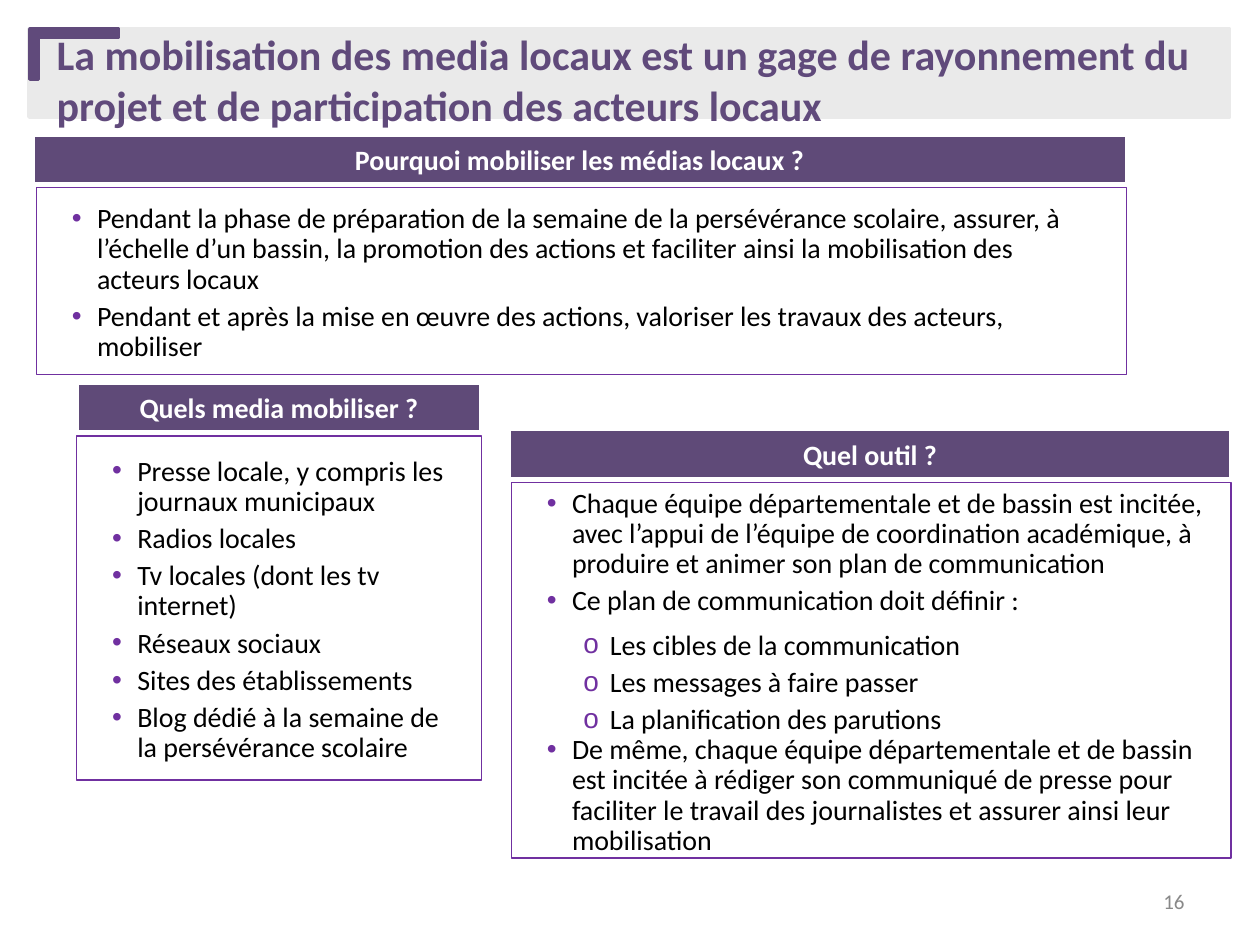
from pptx import Presentation, util as u
from pptx.dml.color import RGBColor
from pptx.enum import shapes, text
from pptx.oxml.ns import qn
from lxml import etree

PLUM = RGBColor(0x60, 0x4A, 0x7B)
HEAD = RGBColor(0x5F, 0x4A, 0x78)
EDGE = RGBColor(0x70, 0x30, 0xA0)
BAND = RGBColor(0xEA, 0xEA, 0xEA)
GREY = RGBColor(0x89, 0x89, 0x89)
WHITE = RGBColor(0xFF, 0xFF, 0xFF)
BLACK = RGBColor(0, 0, 0)
FONT = "Calibri"
LEFT, MID, RIGHT, JUST = (text.PP_ALIGN.LEFT, text.PP_ALIGN.CENTER,
                          text.PP_ALIGN.RIGHT, text.PP_ALIGN.JUSTIFY)

TITLE = ("La mobilisation des media locaux est un gage de rayonnement "
         "du projet et de participation des acteurs locaux")

# heading, heading box, list box, items (a tuple holds sub-items)
PANELS = [
    ("Pourquoi mobiliser les médias locaux ?",
     (0.26, 1.07, 8.68, 0.39), (0.29, 1.49, 8.65, 1.48),
     ["Pendant la phase de préparation de la semaine de la persévérance "
      "scolaire, assurer, à l’échelle d’un bassin, la promotion des actions "
      "et faciliter ainsi la mobilisation des acteurs locaux",
      "Pendant et après la mise en œuvre des actions, valoriser les travaux "
      "des acteurs, mobiliser"]),
    ("Quels media mobiliser ?",
     (0.61, 3.04, 3.21, 0.39), (0.61, 3.46, 3.21, 2.73),
     ["Presse locale, y compris les journaux municipaux",
      "Radios locales",
      "Tv locales (dont les tv internet)",
      "Réseaux sociaux",
      "Sites des établissements",
      "Blog dédié à la semaine de la persévérance scolaire"]),
    ("Quel outil ?",
     (4.04, 3.41, 5.73, 0.39), (4.06, 3.83, 5.71, 2.98),
     ["Chaque équipe départementale et de bassin est incitée, avec l’appui "
      "de l’équipe de coordination académique, à produire et animer son plan "
      "de communication",
      "Ce plan de communication doit définir :",
      ("Les cibles de la communication",
       "Les messages à faire passer",
       "La planification des parutions"),
      "De même, chaque équipe départementale et de bassin est incitée à "
      "rédiger son communiqué de presse pour faciliter le travail des "
      "journalistes et assurer ainsi leur mobilisation"]),
]


def place(shape, box):
    shape.left, shape.top, shape.width, shape.height = map(u.Inches, box)


def style(para, size, color, bold=False, align=LEFT):
    para.alignment = align
    font = para.font
    font.name, font.size, font.bold = FONT, u.Pt(size), bold
    font.color.rgb = color


def center(frame):
    """Wrap the text, anchor it in the middle and keep its size fixed."""
    frame.word_wrap = True
    frame.auto_size = text.MSO_AUTO_SIZE.NONE
    frame.vertical_anchor = text.MSO_ANCHOR.MIDDLE


def block(slide, kind, box, fill, line):
    shape = slide.shapes.add_shape(kind, *map(u.Inches, box))
    shape.shadow.inherit = False
    shape.fill.solid()
    shape.fill.fore_color.rgb = fill
    shape.line.color.rgb = line
    shape.line.width = u.Pt(2)
    return shape


def bullet(para, mark, left, hang):
    props = para._p.get_or_add_pPr()
    props.set("marL", str(u.Inches(left)))
    props.set("indent", str(-u.Inches(hang)))
    color = etree.SubElement(props, qn("a:buClr"))
    etree.SubElement(color, qn("a:srgbClr"), val=str(EDGE))
    etree.SubElement(props, qn("a:buFont"), typeface="Arial")
    etree.SubElement(props, qn("a:buChar"), char=mark)


def add_item(para, words, sub):
    para.text = words
    para.level = 1
    para.line_spacing = 0.9
    para.space_before = u.Pt(4 if sub else 0)
    para.space_after = u.Pt(0 if sub else 4)
    if sub:
        bullet(para, "o", 0.5, 0.21)
    else:
        bullet(para, "•", 0.2, 0.2)
    style(para, 16, BLACK, align=JUST if sub else LEFT)


def fill_list(body, box, items):
    place(body, box)
    body.line.color.rgb = EDGE
    body.line.width = u.Pt(0.75)
    frame = body.text_frame
    center(frame)
    frame.margin_left, frame.margin_top = u.Inches(0.28), u.Inches(0.08)
    frame.margin_right, frame.margin_bottom = u.Inches(0.2), u.Inches(0.04)
    rows = []
    for item in items:
        if isinstance(item, tuple):
            rows += [(words, True) for words in item]
        else:
            rows.append((item, False))
    for i, (words, sub) in enumerate(rows):
        para = frame.add_paragraph() if i else frame.paragraphs[0]
        add_item(para, words, sub)


def add_head(slide, words, box):
    bar = block(slide, shapes.MSO_SHAPE.RECTANGLE, box, HEAD, WHITE)
    center(bar.text_frame)
    para = bar.text_frame.paragraphs[0]
    para.text = words
    para.space_after = u.Pt(6)
    style(para, 16, WHITE, True, MID)


def add_title(slide):
    band = block(slide, shapes.MSO_SHAPE.RECTANGLE,
                 (0.23, 0.23, 9.53, 0.7), BAND, BAND)
    slide.shapes._spTree.insert(2, band._element)  # behind the title
    title = slide.shapes.title
    place(title, (0.35, 0.26, 9.48, 0.74))
    center(title.text_frame)
    title.text_frame.text = TITLE
    style(title.text_frame.paragraphs[0], 24, PLUM, True)
    corner = block(slide, shapes.MSO_SHAPE.CORNER,
                   (0.39, 0.08, 0.4, 0.7), PLUM, PLUM)
    corner.rotation = 90
    corner.adjustments[0] = corner.adjustments[1] = 0.16


def add_number(slide, words):
    box = slide.shapes.add_textbox(*map(u.Inches, (7.17, 6.95, 2.33, 0.4)))
    center(box.text_frame)
    para = box.text_frame.paragraphs[0]
    para.text = words
    style(para, 12, GREY, align=RIGHT)


def main():
    deck = Presentation()
    deck.slide_width, deck.slide_height = u.Inches(10), u.Inches(7.5)
    slide = deck.slides.add_slide(deck.slide_layouts.get_by_name("Comparison"))
    add_title(slide)
    bodies = list(slide.placeholders)[1:]
    for body, (head, bar, box, items) in zip(bodies, PANELS):
        fill_list(body, box, items)
        add_head(slide, head, bar)
    for spare in bodies[len(PANELS):]:
        spare._element.getparent().remove(spare._element)
    add_number(slide, "16")
    deck.save("out.pptx")


if __name__ == "__main__":
    main()
